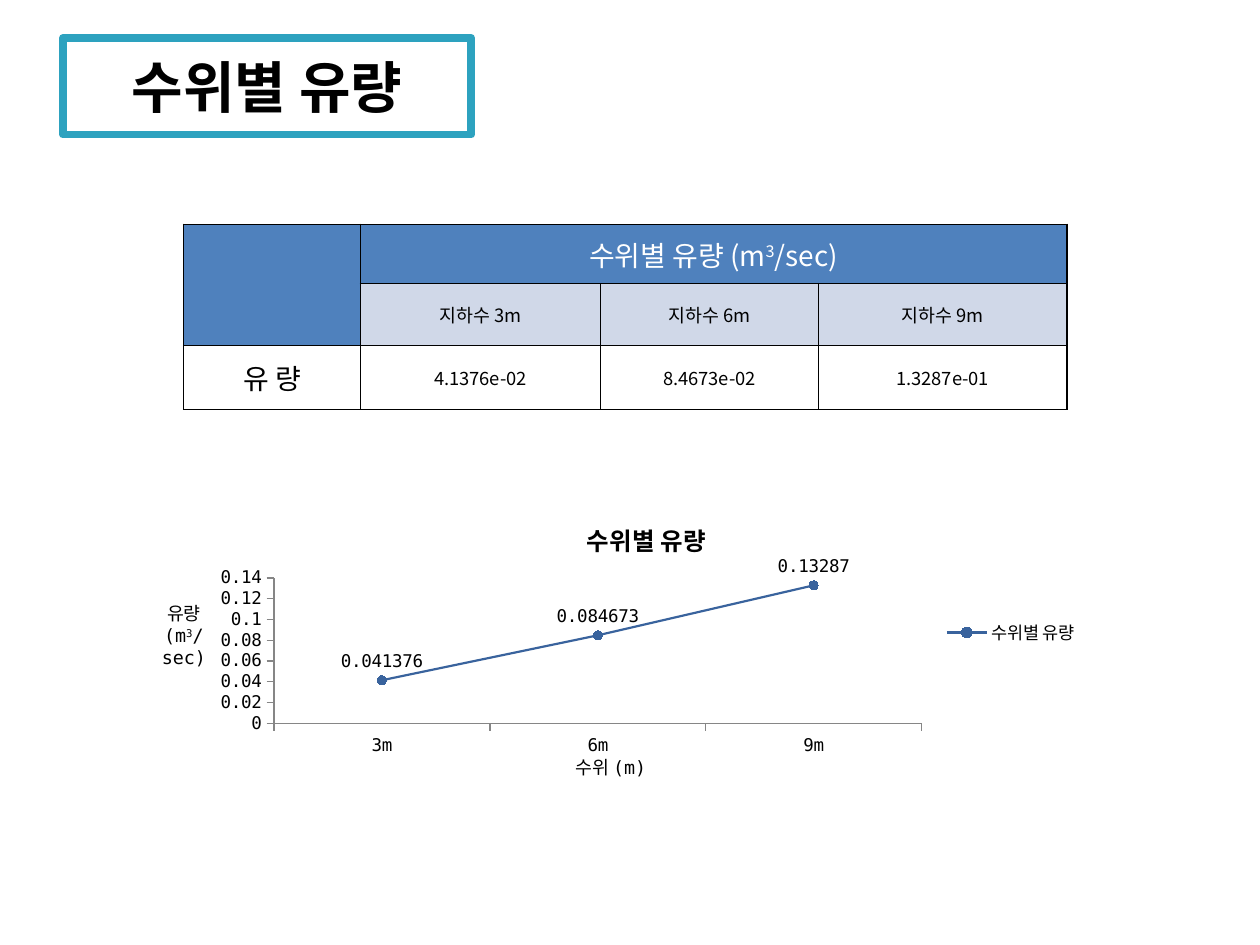
from lxml.etree import SubElement
from pptx import Presentation
from pptx.chart.data import CategoryChartData
from pptx.dml.color import RGBColor
from pptx.enum.chart import XL_CHART_TYPE as ChartType, XL_LABEL_POSITION as LabelPosition
from pptx.enum.chart import XL_LEGEND_POSITION as LegendPosition, XL_MARKER_STYLE as MarkerStyle
from pptx.enum.chart import XL_TICK_MARK as TickMark
from pptx.enum.text import MSO_ANCHOR as Anchor, PP_ALIGN as Align
from pptx.oxml import parse_xml
from pptx.oxml.ns import nsdecls, qn
from pptx.util import Pt

MONO = "DejaVu Sans Mono"
KOREAN = "Noto Sans CJK KR"
BLACK, WHITE, HEADER_BLUE = "000000", "FFFFFF", "4F81BD"
TITLE = "수위별 유량"
FLOW_UNIT = [("(m", False), ("3", True), ("/sec)", False)]


def color(value):
    return RGBColor.from_string(value)


def paint(fill, value):
    fill.solid()
    fill.fore_color.rgb = color(value)


def style_font(font, size, value=BLACK, name=MONO, bold=False):
    font.size, font.bold, font.name = Pt(size), bold, name
    font.color.rgb = color(value)


def add_runs(paragraph, parts, size, value=BLACK, name=MONO, bold=False):
    for text, raised in parts:
        run = paragraph.add_run()
        run.text = text
        style_font(run.font, size, value, name, bold)
        properties = run._r.get_or_add_rPr()
        SubElement(properties, qn("a:ea")).set("typeface", KOREAN)
        if raised:
            properties.set("baseline", "30000")


def add_title(slide, left, top, width, height):
    title = slide.shapes.title
    title.left, title.top, title.width, title.height = map(Pt, (left, top, width, height))
    paint(title.fill, WHITE)
    paint(title.line.fill, "2DA2BF")
    title.line.width = Pt(4.33)
    SubElement(title.line._get_or_add_ln(), qn("a:round"))
    frame = title.text_frame
    frame.vertical_anchor = Anchor.MIDDLE
    paragraph = frame.paragraphs[0]
    paragraph.alignment = Align.CENTER
    add_runs(paragraph, [(TITLE, False)], 32, bold=True)


def add_borders(cell):
    properties = cell._tc.get_or_add_tcPr()
    for position, side in enumerate(("lnL", "lnR", "lnT", "lnB")):
        properties.insert(position, parse_xml(
            f'<a:{side} {nsdecls("a")} w="{Pt(1)}"><a:solidFill>'
            f'<a:srgbClr val="{BLACK}"/></a:solidFill></a:{side}>'))


def fill_cell(cell, parts, size, value=BLACK):
    cell.vertical_anchor = Anchor.MIDDLE
    cell.margin_left = cell.margin_right = cell.margin_top = cell.margin_bottom = 0
    paragraph = cell.text_frame.paragraphs[0]
    paragraph.alignment = Align.CENTER
    add_runs(paragraph, parts, size, value, KOREAN)


def add_flow_table(slide, left, top, width, height):
    table = slide.shapes.add_table(3, 4, Pt(left), Pt(top), Pt(width), Pt(height)).table
    for column, share in zip(table.columns, (0.2, 0.272, 0.247, 0.281)):
        column.width = Pt(width * share)
    for row, share in zip(table.rows, (0.32, 0.335, 0.345)):
        row.height = Pt(height * share)
    for row_index, row in enumerate(table.rows):
        for column_index, cell in enumerate(row.cells):
            fills = (HEADER_BLUE, "D0D8E8" if column_index else HEADER_BLUE, WHITE)
            paint(cell.fill, fills[row_index])
            add_borders(cell)
    table.cell(0, 0).merge(table.cell(1, 0))
    table.cell(0, 1).merge(table.cell(0, 3))
    fill_cell(table.cell(0, 1), [(TITLE + " ", False)] + FLOW_UNIT, 16, WHITE)
    fill_cell(table.cell(2, 0), [("유 량", False)], 16)
    columns = (("지하수 3m", "4.1376e-02"), ("지하수 6m", "8.4673e-02"),
               ("지하수 9m", "1.3287e-01"))
    for index, (level, flow) in enumerate(columns, start=1):
        fill_cell(table.cell(1, index), [(level, False)], 10.5)
        fill_cell(table.cell(2, index), [(flow, False)], 10.5)


def set_plot_layout(chart, **shares):
    plot_area = chart._chartSpace.chart.plotArea
    for old in plot_area.findall(qn("c:layout")):
        plot_area.remove(old)
    values = "".join(f'<c:{key} val="{share}"/>' for key, share in shares.items())
    plot_area.insert(0, parse_xml(
        f'<c:layout {nsdecls("c")}><c:manualLayout><c:layoutTarget val="inner"/>'
        f'<c:xMode val="edge"/><c:yMode val="edge"/>{values}</c:manualLayout></c:layout>'))


def add_flow_chart(slide, left, top, width, height):
    data = CategoryChartData()
    data.categories = ["3m", "6m", "9m"]
    data.add_series(TITLE, (0.041376, 0.084673, 0.13287))
    chart = slide.shapes.add_chart(ChartType.LINE_MARKERS, Pt(left), Pt(top),
                                   Pt(width), Pt(height), data).chart
    style_font(chart.font, 10)
    chart.has_title = True
    add_runs(chart.chart_title.text_frame.paragraphs[0], [(TITLE, False)], 14, bold=True)
    chart.chart_title.include_in_layout = False
    chart.has_legend = True
    chart.legend.position = LegendPosition.RIGHT
    chart.legend.include_in_layout = False
    set_plot_layout(chart, x=0.08, y=0.29, w=0.73, h=0.56)
    for axis in (chart.category_axis, chart.value_axis):
        axis.has_major_gridlines = False
        axis.major_tick_mark = TickMark.OUTSIDE
        paint(axis.format.line.fill, "868686")
    value_axis = chart.value_axis
    value_axis.minimum_scale, value_axis.maximum_scale, value_axis.major_unit = 0, 0.14, 0.02
    plot = chart.plots[0]
    plot.vary_by_categories = False
    series = plot.series[0]
    series.smooth = False
    paint(series.format.line.fill, "39639D")
    series.format.line.width = Pt(1.25)
    series.marker.style, series.marker.size = MarkerStyle.CIRCLE, 5
    paint(series.marker.format.fill, "39639D")
    paint(series.marker.format.line.fill, "39639D")
    labels = series.data_labels
    labels.show_value = True
    labels.position = LabelPosition.ABOVE
    style_font(labels.font, 10)


def add_axis_caption(slide, left, top, width, height, lines, alignment):
    frame = slide.shapes.add_textbox(Pt(left), Pt(top), Pt(width), Pt(height)).text_frame
    frame.word_wrap = True
    for index, parts in enumerate(lines):
        paragraph = frame.add_paragraph() if index else frame.paragraphs[0]
        paragraph.alignment = alignment
        add_runs(paragraph, parts, 10.5)


def main():
    presentation = Presentation()
    presentation.slide_width, presentation.slide_height = Pt(720), Pt(540)
    slide = presentation.slides.add_slide(presentation.slide_layouts[5])
    add_title(slide, 36, 21.6, 233.3, 55.4)
    add_flow_table(slide, 105, 128.2, 504.7, 105.8)
    add_flow_chart(slide, 116, 287.3, 507, 148.3)
    add_axis_caption(slide, 321.8, 428.4, 56.2, 20.2, [[("수위 (m)", False)]], Align.LEFT)
    add_axis_caption(slide, 74.9, 340.6, 60.5, 32.4,
                     [[("유량", False)], FLOW_UNIT], Align.CENTER)
    presentation.save("out.pptx")


if __name__ == "__main__":
    main()
